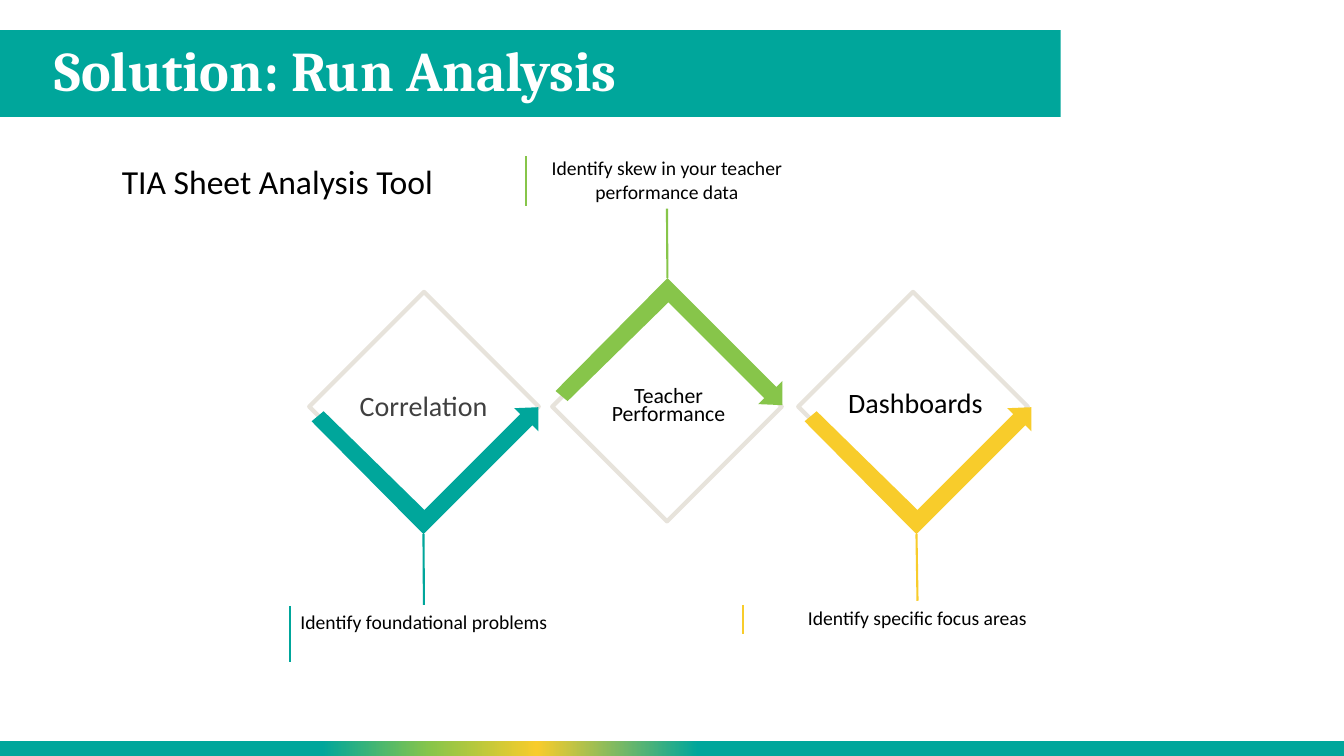
from lxml import etree
from pptx import Presentation
from pptx.dml.color import RGBColor
from pptx.enum.shapes import MSO_CONNECTOR, MSO_SHAPE
from pptx.enum.text import MSO_ANCHOR, PP_ALIGN
from pptx.oxml import parse_xml
from pptx.oxml.ns import nsdecls, qn
from pptx.util import Inches, Pt

# Content
TITLE = "Solution: Run Analysis"
TOOL = "TIA Sheet Analysis Tool"
# diamond left, arrow tip, direction (1 points down, -1 up),
# label and its look, caption and its box, side bar (x, top, bottom)
STEPS = [
    dict(hue="teal", left=3.40, tip=(4.20, 5.30), way=1,
         label="Correlation", name_x=3.24, size="name", ink="gray", lead=1.0,
         note="Identify foundational problems", box=(2.88, 6.00, 2.65, 0.57),
         bar=(2.88, 6.01, 6.57)),
    dict(hue="green", left=5.81, tip=(6.62, 2.76), way=-1,
         label="Teacher Performance", name_x=5.67, size="small", ink="black", lead=0.7,
         note="Identify skew in your teacher performance data", box=(5.29, 1.50, 2.65, 0.57),
         bar=(5.22, 1.55, 2.04)),
    dict(hue="gold", left=8.25, tip=(9.09, 5.30), way=1,
         label="Dashboards", name_x=8.12, size="name", ink="black", lead=0.9,
         note="Identify specific focus areas", box=(7.37, 5.96, 3.46, 0.34),
         bar=(7.37, 6.00, 6.29)),
]
# Bent arrow outline, measured from its tip
BEND = [(0, 0), (-1.11, -1.12), (-0.99, -1.22), (0.01, -0.24), (0.96, -1.19),
        (0.90, -1.25), (1.14, -1.26), (1.14, -1.02), (1.08, -1.08)]
# Footer colour stops, in percent from the left
STOPS = [(0, "teal"), (24, "teal"), (32, "green"), (40, "gold"), (52, "teal"), (100, "teal")]

THEME = dict(
    color=dict(teal="00A69B", green="87C54A", gold="F8CC2B", sand="E7E3DB",
               gray="404040", black="000000", white="FFFFFF"),
    size=dict(title=40, head=24, name=20, small=15.5, note=14),
    font=dict(title="Cambria", body="Calibri"),
)

deck = Presentation()
deck.slide_width, deck.slide_height = Inches(13.33), Inches(7.5)
slide = deck.slides.add_slide(deck.slide_layouts[6])
shapes = slide.shapes


def rgb(hue):
    return RGBColor.from_string(THEME["color"][hue])


def paint(shape, hue):
    shape.shadow.inherit = False
    shape.line.fill.background()
    shape.fill.solid()
    shape.fill.fore_color.rgb = rgb(hue)


def rect(x, y, w, h):
    return shapes.add_shape(MSO_SHAPE.RECTANGLE, Inches(x), Inches(y), Inches(w), Inches(h))


def write(text, x, y, w, h, size, hue="black", face="body", align=PP_ALIGN.CENTER, lead=1.0):
    box = shapes.add_textbox(Inches(x), Inches(y), Inches(w), Inches(h))
    frame = box.text_frame
    frame.word_wrap = True
    frame.text = text
    para = frame.paragraphs[0]
    para.alignment, para.line_spacing = align, lead
    font = para.runs[0].font
    font.name, font.size = THEME["font"][face], Pt(THEME["size"][size])
    font.color.rgb = rgb(hue)
    return box


def rule(start, end, hue):
    line = shapes.add_connector(MSO_CONNECTOR.STRAIGHT, *map(Inches, start + end))
    line.line.color.rgb = rgb(hue)
    line.line.width = Pt(1.5)
    etree.SubElement(line._element.spPr, qn("a:effectLst"))
    return line


# Title band
paint(rect(-0.01, 0.3, 10.53, 0.86), "teal")
title = write(TITLE, 0.44, 0.3, 10.06, 0.86, "title", "white", "title", PP_ALIGN.LEFT, 0.9)
title.text_frame.vertical_anchor = MSO_ANCHOR.MIDDLE
title.text_frame.paragraphs[0].runs[0].font.bold = True

# Footer band with gradient
foot = rect(-0.01, 7.35, 13.34, 0.15)
paint(foot, "teal")
stops = "".join(
    f'<a:gs pos="{pos * 1000}"><a:srgbClr val="{THEME["color"][hue]}"/></a:gs>'
    for pos, hue in STOPS)
props = foot._element.spPr
props.replace(props.find(qn("a:solidFill")), parse_xml(
    f'<a:gradFill {nsdecls("a")} rotWithShape="1"><a:gsLst>{stops}</a:gsLst>'
    '<a:lin ang="0" scaled="0"/></a:gradFill>'))

# Tool name
write(TOOL, 1.11, 1.55, 3.42, 0.5, "head", align=PP_ALIGN.LEFT)

# Steps
for step in STEPS:
    hue, way, (tx, ty) = step["hue"], step["way"], step["tip"]

    # Diamond
    gem = rect(step["left"], 3.23, 1.61, 1.61)
    gem.rotation = 45
    gem.shadow.inherit = False
    gem.fill.background()
    gem.line.color.rgb = rgb("sand")
    gem.line.width = Pt(3)

    # Bent arrow
    pts = [(Inches(tx + dx), Inches(ty + way * dy)) for dx, dy in BEND]
    pen = shapes.build_freeform(*pts[0])
    pen.add_line_segments(pts[1:], close=True)
    paint(pen.convert_to_shape(), hue)

    # Label and caption
    write(step["label"], step["name_x"], 3.81, 1.92, 0.5, step["size"], step["ink"],
          lead=step["lead"])
    note = write(step["note"], *step["box"], "note")

    # Stem from the tip to the caption, and side bar
    x, y, w, h = step["box"]
    edge = y if way > 0 else y + h
    stem = rule((tx, ty), (x + w / 2, edge), hue)
    stem.end_connect(note, 0 if way > 0 else 2)
    bx, top, low = step["bar"]
    rule((bx, top), (bx, low), hue)

deck.save("out.pptx")
